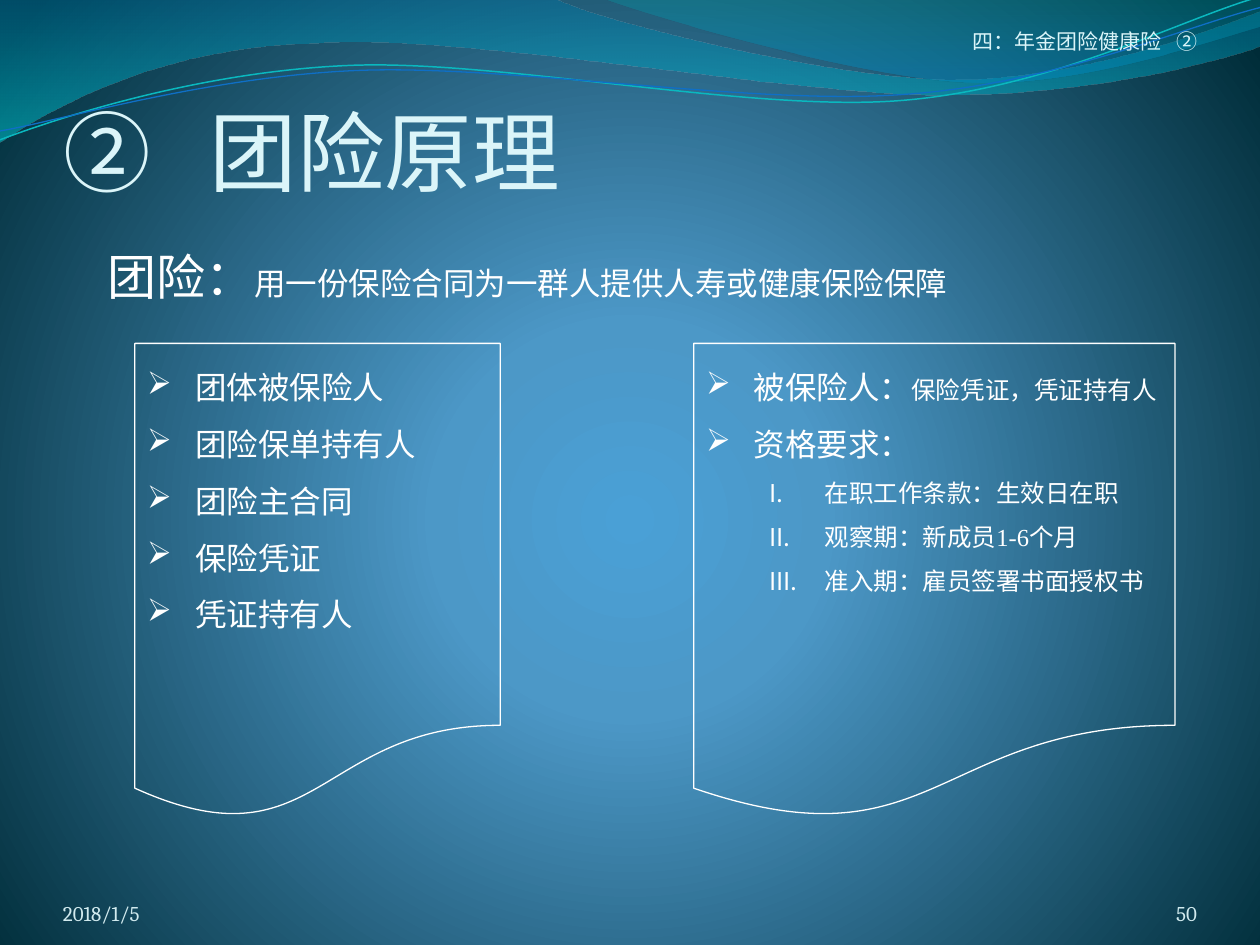
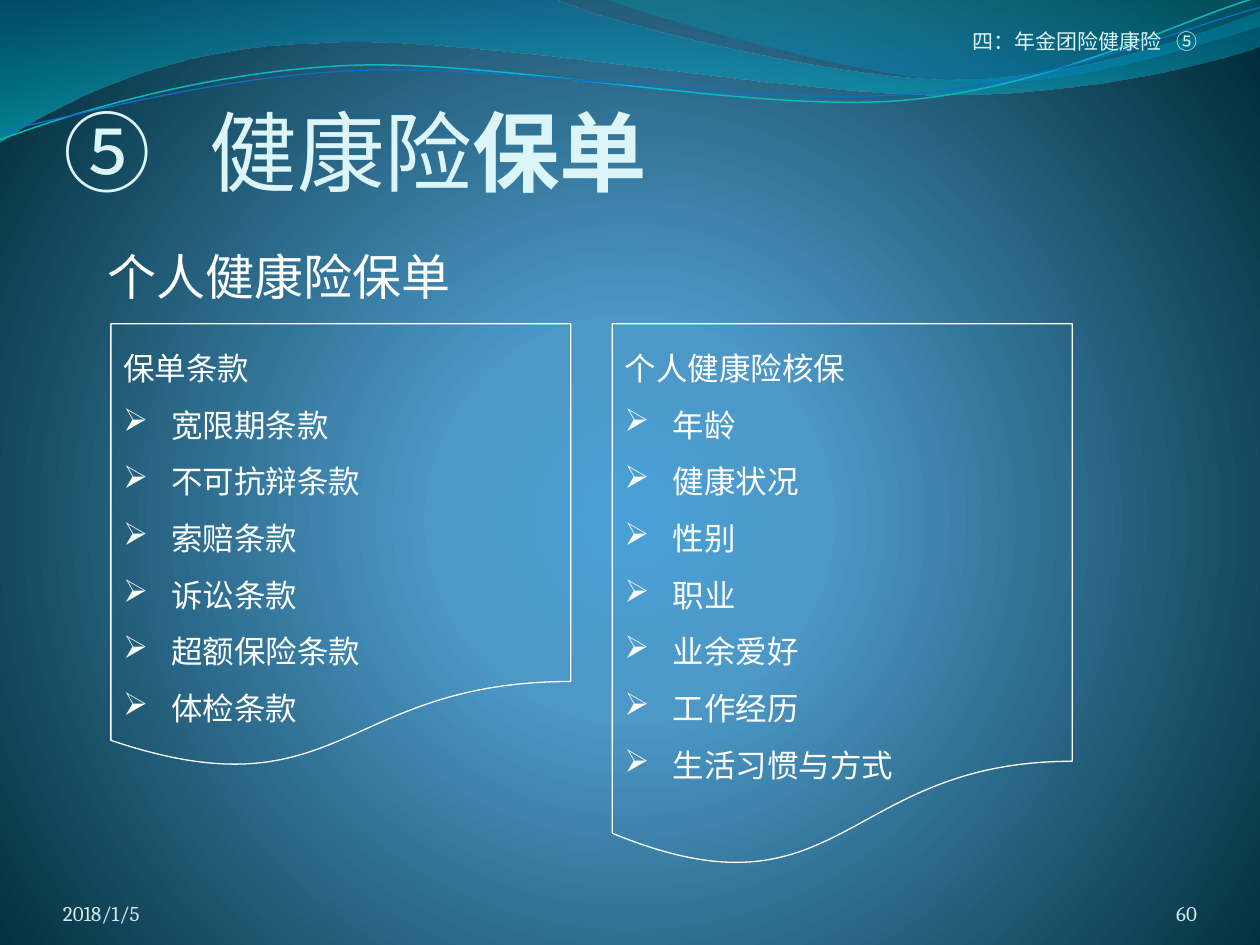
from collections import namedtuple

from lxml import etree
from pptx import Presentation
from pptx import util as u
from pptx.dml.color import RGBColor
from pptx.enum import shapes, text
from pptx.oxml.ns import qn

# The slide is divided into 100 columns and 75 rows.
WIDTH, HEIGHT = u.Inches(10), u.Inches(7.5)
COLUMN, ROW = WIDTH / 100, HEIGHT / 75

WHITE, PALE, FOOTER = "FFFFFF", "DBF5F9", "D1EAEE"
TITLE_FONT, BODY_FONT, PANEL_FONT = "Calibri", "Cambria", "Times New Roman"

Box = namedtuple("Box", "left top width height")
Run = namedtuple("Run", "words size font color bold spacing", defaults=(False, 0))

DATE_BOX = Box(5, 69.5, 23.3, 4)
NUMBER_BOX = Box(86.7, 69.5, 8.3, 4)
CHAPTER_BOX = Box(75.2, 0, 19.8, 4.3)
TITLE_BOX = Box(5, 6, 80.1, 10.1)
LEAD_BOX = Box(7.55, 16.25, 85, 8.6)

BACKGROUND_STOPS = [(0, "4AA0D6", 100), (25, "4C98C7", 100), (100, "002C38", 100)]

# Outlines are lists of steps: one point is a straight line,
# three points are a cubic curve (two controls and an end).
BAND = [
    [(0, 0)], [(44, -0.1)],
    [(47.6, 1.7), (66.4, 6.3), (75.8, 6.3)],
    [(85.3, 6.3), (95.8, 2.6), (100, 0.9)],
    [(100.1, 3.6)],
    [(98.3, 4.4), (87, 7.6), (74.6, 7.5)],
    [(62.2, 7.5), (38.2, 2.8), (25.7, 3.4)],
    [(12.9, 3.6), (4.6, 8.3), (-0.1, 11.3)],
    [(0, 0)],
]
CORNER = [
    [(47.9, -0.1)],
    [(50.9, 1.1), (68.2, 6.2), (76.9, 6.5)],
    [(85.6, 6.9), (96.1, 3.2), (100, 2.1)],
    [(100, 0)], [(47.9, -0.1)],
]
TEAL_STRAND = [
    [(0, 11.1)],
    [(4.8, 9.3), (15.8, 5.7), (27.7, 5.2)],
    [(39.5, 4.7), (59.3, 8.9), (71.3, 8)],
    [(83.3, 7.1), (93.8, 1.5), (99.8, -0.2)],
]
BLUE_STRAND = [
    [(0, 10.4)],
    [(4.7, 9.6), (16.4, 6.1), (28.3, 5.6)],
    [(40.3, 5.1), (59.7, 8.4), (71.7, 7.5)],
    [(83.6, 6.7), (94.1, 2.1), (100, 0.6)],
]


def rgb(color):
    return RGBColor.from_string(color)


def place(box):
    """Turn a box in columns and rows into slide lengths."""
    return (round(box.left * COLUMN), round(box.top * ROW),
            round(box.width * COLUMN), round(box.height * ROW))


def add_child(parent, tag, **attributes):
    child = etree.SubElement(parent, qn(tag))
    for name, value in attributes.items():
        child.set(name, str(value))
    return child


def set_gradient(properties, stops, circle=None):
    """Replace an empty fill by a gradient, downward or round the circle's rectangle."""
    empty_fill = properties.find(qn("a:noFill"))
    gradient = etree.Element(qn("a:gradFill"), rotWithShape="1")
    stop_list = add_child(gradient, "a:gsLst")
    for position, color, opacity in stops:
        stop = add_child(stop_list, "a:gs", pos=position * 1000)
        shade = add_child(stop, "a:srgbClr", val=color)
        if opacity < 100:
            add_child(shade, "a:alpha", val=opacity * 1000)
    if circle:
        circle_element = add_child(gradient, "a:path", path="circle")
        add_child(circle_element, "a:fillToRect",
                  **{side: share * 1000 for side, share in circle.items()})
    else:
        add_child(gradient, "a:lin", ang=5400000, scaled=0)
    properties.replace(empty_fill, gradient)


def set_background(master):
    master.background.fill.background()
    properties = master.element.find(".//" + qn("p:bgPr"))
    set_gradient(properties, BACKGROUND_STOPS, dict(l=10, t=110, r=10, b=100))


def add_outline(slide, steps, closed=False):
    """Build a freeform through all points, then join each curve's three lines."""
    points = [(round(x * COLUMN), round(y * ROW)) for step in steps for x, y in step]
    builder = slide.shapes.build_freeform(*points[0])
    builder.add_line_segments(points[1:], close=closed)
    shape = builder.convert_to_shape()
    lines = iter(list(shape.element.iter(qn("a:lnTo"))))
    for step in steps[1:]:
        pieces = [next(lines) for _ in step]
        if len(pieces) == 3:
            cubic = etree.Element(qn("a:cubicBezTo"))
            pieces[0].addprevious(cubic)
            for piece in pieces:
                cubic.append(piece[0])
                piece.getparent().remove(piece)
    shape.shadow.inherit = False
    shape.fill.background()
    return shape


def draw_waves(slide, master):
    """Draw the waves and hand them to the master, which shows them on every slide."""
    waves = []
    for steps, stops in ((BAND, [(0, "0074A1", 45), (100, "00C6CF", 55)]),
                         (CORNER, [(0, "00A1A9", 30), (80, "008BBF", 45)])):
        area = add_outline(slide, steps, True)
        area.line.fill.background()
        set_gradient(area.element.spPr, stops)
        waves.append(area)
    for steps, color, width in ((TEAL_STRAND, "0AB8BF", 0.85),
                                (BLUE_STRAND, "0F6FC6", 0.75)):
        strand = add_outline(slide, steps)
        strand.line.color.rgb = rgb(color)
        strand.line.width = u.Pt(width)
        waves.append(strand)
    for identifier, wave in enumerate(waves, 101):
        wave.element.nvSpPr.cNvPr.set("id", str(identifier))
        master.shapes.element.append(wave.element)


def add_runs(paragraph, runs):
    for item in runs:
        run = paragraph.add_run()
        run.text = item.words
        run.font.size = u.Pt(item.size)
        run.font.name = item.font
        run.font.color.rgb = rgb(item.color)
        if item.bold:
            run.font.bold = True
        if item.spacing:
            run.font._element.set("spc", str(round(item.spacing * 100)))


def wide_gap(size):
    """One space, stretched to the width of three."""
    return Run(" ", size, TITLE_FONT, PALE, spacing=0.45 * size)


def set_frame(frame, top_inset=0):
    """Bottom-anchored text that starts at the very edge of its box."""
    frame.word_wrap = True
    frame.auto_size = text.MSO_AUTO_SIZE.NONE
    frame.vertical_anchor = text.MSO_ANCHOR.BOTTOM
    frame.margin_left = frame.margin_right = frame.margin_bottom = 0
    frame.margin_top = u.Inches(top_inset)


def add_label(slide, box, runs, align=text.PP_ALIGN.LEFT):
    frame = slide.shapes.add_textbox(*place(box)).text_frame
    set_frame(frame)
    frame.paragraphs[0].alignment = align
    add_runs(frame.paragraphs[0], runs)


def draw_header_and_footer(slide, mark, number):
    right = text.PP_ALIGN.RIGHT
    add_label(slide, DATE_BOX, [Run("2018/1/5", 12, BODY_FONT, FOOTER)])
    add_label(slide, NUMBER_BOX, [Run(number, 12, BODY_FONT, FOOTER)], right)
    add_label(slide, CHAPTER_BOX, [Run("四：年金团险健康险", 12, TITLE_FONT, PALE),
                                   wide_gap(12), Run(mark, 12, TITLE_FONT, PALE)], right)


def draw_title(slide, mark, words, bold_words):
    title = slide.shapes.title
    title.left, title.top, title.width, title.height = place(TITLE_BOX)
    set_frame(title.text_frame, 0.05)
    paragraph = title.text_frame.paragraphs[0]
    paragraph.alignment = text.PP_ALIGN.LEFT
    add_runs(paragraph, [Run(mark, 50, TITLE_FONT, PALE), wide_gap(50),
                         Run(words, 50, TITLE_FONT, PALE)])
    if bold_words:
        add_runs(paragraph, [Run(bold_words, 50, TITLE_FONT, PALE, True)])


def draw_lead(slide, heading, explanation):
    frame = slide.shapes.add_textbox(*place(LEAD_BOX)).text_frame
    frame.word_wrap = True
    paragraph = frame.paragraphs[0]
    paragraph.line_spacing = 1.6
    paragraph.space_before = u.Pt(5.6)
    add_runs(paragraph, [Run(heading, 28, BODY_FONT, WHITE)])
    if explanation:
        add_runs(paragraph, [Run(explanation, 18, BODY_FONT, WHITE)])


def set_bullet(paragraph, kind):
    properties = paragraph._p.get_or_add_pPr()
    margin, indent = (0.38, 0.38) if kind == "arrow" else (0.94, 0.44)
    properties.set("marL", str(u.Inches(margin)))
    properties.set("indent", str(-u.Inches(indent)))
    if kind == "arrow":
        add_child(properties, "a:buFont", typeface="Wingdings", charset=2)
        add_child(properties, "a:buChar", char="Ø")  # an arrowhead in Wingdings
    else:
        paragraph.level = 1
        add_child(properties, "a:buFont", typeface=TITLE_FONT)
        add_child(properties, "a:buAutoNum", type="romanUcPeriod")


def draw_panel(slide, box, lines):
    """Draw a document shape; each line is its kind and (words, size) pairs."""
    panel = slide.shapes.add_shape(shapes.MSO_SHAPE.FLOWCHART_DOCUMENT, *place(box))
    panel.shadow.inherit = False
    panel.fill.background()
    panel.line.color.rgb = rgb(WHITE)
    panel.line.width = u.Pt(0.75)
    frame = panel.text_frame
    frame.word_wrap = True
    frame.vertical_anchor = text.MSO_ANCHOR.TOP
    for index, (kind, *parts) in enumerate(lines):
        paragraph = frame.add_paragraph() if index else frame.paragraphs[0]
        paragraph.alignment = text.PP_ALIGN.LEFT
        paragraph.line_spacing = 1.5
        if kind != "heading":
            set_bullet(paragraph, kind)
        add_runs(paragraph, [Run(words, size, PANEL_FONT, WHITE) for words, size in parts])


def arrows(*items):
    return [("arrow", (item, 18)) for item in items]


def romans(*items):
    return [("roman", (item, 14)) for item in items]


def heading(words):
    return [("heading", (words, 18))]


def build_slide(presentation, mark, number, title, lead, panels, bold_title=""):
    slide = presentation.slides.add_slide(presentation.slide_layouts[5])
    draw_header_and_footer(slide, mark, number)
    draw_title(slide, mark, title, bold_title)
    draw_lead(slide, *lead)
    for box, lines in panels:
        draw_panel(slide, box, lines)
    return slide


def main():
    presentation = Presentation()
    presentation.slide_width, presentation.slide_height = WIDTH, HEIGHT
    set_background(presentation.slide_master)
    group_slide = build_slide(
        presentation, "②", "50", "团险原理",
        ("团险：", "用一份保险合同为一群人提供人寿或健康保险保障"),
        [(Box(10.7, 27.25, 29, 37.8),
          arrows("团体被保险人", "团险保单持有人", "团险主合同", "保险凭证", "凭证持有人")),
         (Box(55.05, 27.25, 38.2, 37.8),
          [("arrow", ("被保险人：", 18), ("保险凭证，凭证持有人", 14))]
          + arrows("资格要求：")
          + romans("在职工作条款：生效日在职", "观察期：新成员1-6个月",
                   "准入期：雇员签署书面授权书"))])
    draw_waves(group_slide, presentation.slide_master)
    build_slide(
        presentation, "⑤", "60", "健康险", ("个人健康险保单", ""),
        [(Box(8.8, 25.7, 36.5, 35.4),
          heading("保单条款")
          + arrows("宽限期条款", "不可抗辩条款", "索赔条款", "诉讼条款",
                   "超额保险条款", "体检条款")),
         (Box(48.6, 25.7, 36.5, 43.3),
          heading("个人健康险核保")
          + arrows("年龄", "健康状况", "性别", "职业", "业余爱好", "工作经历",
                   "生活习惯与方式"))],
        bold_title="保单")
    presentation.save("out.pptx")


if __name__ == "__main__":
    main()
